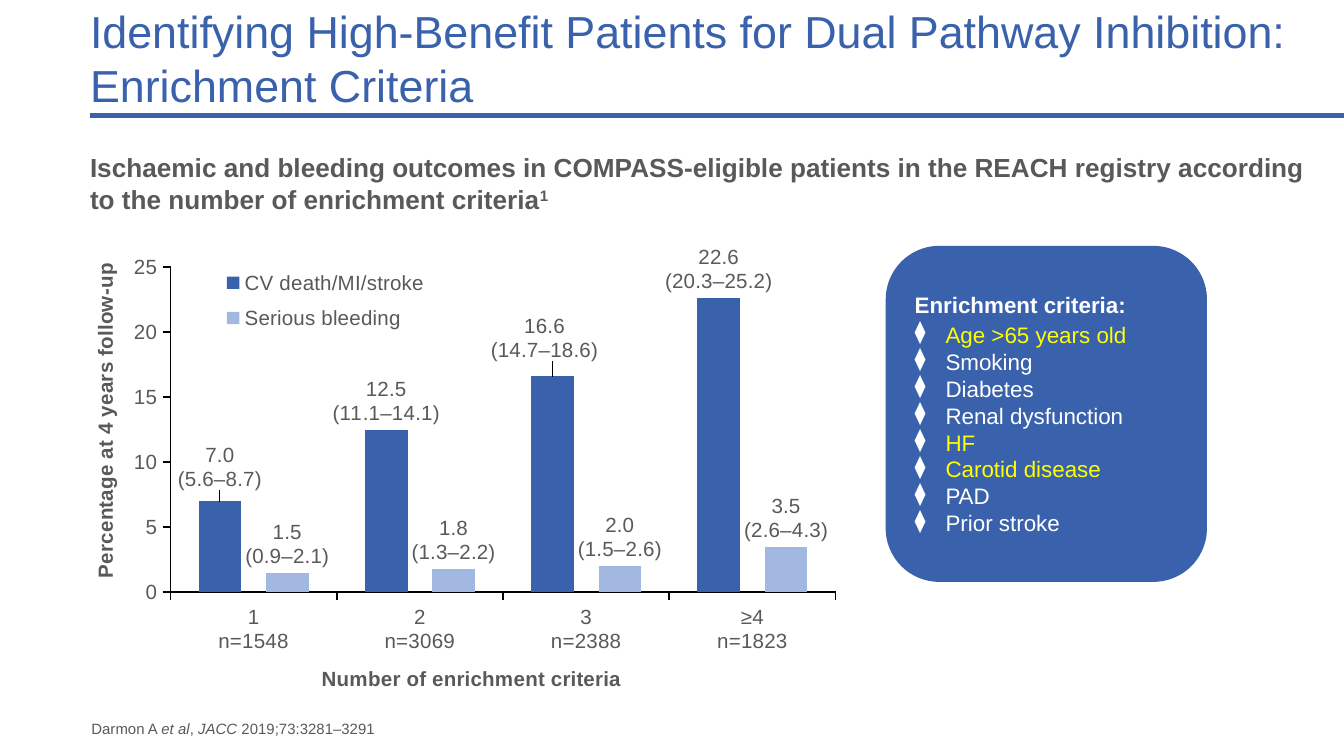
from lxml.etree import SubElement
from pptx import Presentation
from pptx.chart.data import CategoryChartData
from pptx.dml.color import RGBColor
from pptx.enum.chart import XL_CHART_TYPE as ChartType
from pptx.enum.chart import XL_LABEL_POSITION as LabelPosition
from pptx.enum.chart import XL_LEGEND_POSITION as LegendPosition
from pptx.enum.chart import XL_TICK_MARK as TickMark
from pptx.enum.shapes import MSO_CONNECTOR as Connector
from pptx.enum.shapes import MSO_SHAPE as Shape
from pptx.enum.text import MSO_ANCHOR as Anchor
from pptx.enum.text import PP_ALIGN as Align
from pptx.oxml import parse_xml
from pptx.oxml.ns import nsdecls, qn
from pptx.util import Inches, Pt

BLUE = RGBColor(0x39, 0x61, 0xAC)
PALE_BLUE = RGBColor(0xA3, 0xB8, 0xE0)
GREY = RGBColor(0x59, 0x59, 0x59)
BLACK = RGBColor(0, 0, 0)
WHITE = RGBColor(0xFF, 0xFF, 0xFF)
YELLOW = RGBColor(0xFF, 0xFF, 0)

WIDTH = 10
HEIGHT = WIDTH * 9 / 16
LEFT, TEXT_WIDTH = 0.67, 9.06
CRITERIA = ["Age >65 years old", "Smoking", "Diabetes", "Renal dysfunction",
            "HF", "Carotid disease", "PAD", "Prior stroke"]
HIGHLIGHTED = {"Age >65 years old", "HF", "Carotid disease"}
CATEGORIES = ["1\nn=1548", "2\nn=3069", "3\nn=2388", "≥4\nn=1823"]
OUTCOMES = [
    ("CV death/MI/stroke", BLUE, [7, 12.5, 16.6, 22.6],
     ["5.6–8.7", "11.1–14.1", "14.7–18.6", "20.3–25.2"]),
    ("Serious bleeding", PALE_BLUE, [1.5, 1.8, 2, 3.5],
     ["0.9–2.1", "1.3–2.2", "1.5–2.6", "2.6–4.3"]),
]
LABEL_SHIFTS = {7: (0, -0.01), 16.6: (-0.01, -0.02)}


def set_font(font, color, **values):
    """Apply Arial, a colour and any further font values."""
    font.color.rgb = color
    for name, value in {"name": "Arial", **values}.items():
        setattr(font, name, value)


def add_span(para, text, color, **values):
    """Append a formatted run to a paragraph."""
    span = para.add_run()
    span.text = text
    set_font(span.font, color, **values)
    return span


def add_text_box(page, left, top, width, height, anchor):
    """Add a wrapping box without margins and return its first paragraph."""
    box = page.shapes.add_textbox(*map(Inches, (left, top, width, height)))
    frame = box.text_frame
    margins = {f"margin_{side}": 0 for side in ("left", "right", "top", "bottom")}
    for name, value in {"word_wrap": True, "vertical_anchor": anchor, **margins}.items():
        setattr(frame, name, value)
    return frame.paragraphs[0]


def add_title(page):
    """Add the two-line title and the rule below it."""
    para = add_text_box(page, LEFT, 0.43, TEXT_WIDTH, 0.4, Anchor.BOTTOM)
    for index, line in enumerate(["Identifying High-Benefit Patients for Dual Pathway Inhibition:",
                                  "Enrichment Criteria"]):
        if index:
            para.add_line_break()
        add_span(para, line, BLUE, size=Pt(24))
    rule = page.shapes.add_connector(
        Connector.STRAIGHT, *map(Inches, (LEFT, 0.86, WIDTH, 0.86)))
    rule.line.color.rgb = BLUE
    rule.line.width = Pt(2.25)
    SubElement(rule._element.spPr, qn("a:effectLst"))


def add_subtitle(page):
    """Add the bold chart heading with its reference mark."""
    para = add_text_box(page, LEFT, 1.13, TEXT_WIDTH, 0.33, Anchor.TOP)
    style = {"size": Pt(14), "bold": True}
    add_span(para, "Ischaemic and bleeding outcomes in COMPASS-eligible patients in the "
             "REACH registry according to the number of enrichment criteria", GREY, **style)
    mark = add_span(para, "1", GREY, **style)
    mark.font._element.set("baseline", "30000")


def add_bullet(para):
    """Give a paragraph a white diamond bullet with a hanging indent."""
    props = para._p.get_or_add_pPr()
    props.set("marL", str(Inches(0.23)))
    props.set("indent", str(-Inches(0.23)))
    color = SubElement(props, qn("a:buClr"))
    SubElement(color, qn("a:srgbClr"), val=str(WHITE))
    SubElement(props, qn("a:buChar"), char="⧫")


def add_criteria(page):
    """Add the rounded panel that lists the enrichment criteria."""
    panel = page.shapes.add_shape(
        Shape.ROUNDED_RECTANGLE, *map(Inches, (6.59, 1.83, 2.39, 2.5)))
    panel.shadow.inherit = False
    panel.fill.solid()
    panel.fill.fore_color.rgb = BLUE
    panel.line.fill.background()
    frame = panel.text_frame
    frame.word_wrap = True
    frame.vertical_anchor = Anchor.MIDDLE
    heading = frame.paragraphs[0]
    heading.alignment = Align.LEFT
    heading.space_after = Pt(1.5)
    add_span(heading, "Enrichment criteria:", WHITE, size=Pt(12), bold=True)
    for criterion in CRITERIA:
        para = frame.add_paragraph()
        para.alignment = Align.LEFT
        add_bullet(para)
        color = YELLOW if criterion in HIGHLIGHTED else WHITE
        add_span(para, criterion, color, size=Pt(12))


def make_layout(*shares, target="", mode=""):
    """Build a manual chart layout from shares of the chart's size."""
    inner = f'<c:layoutTarget val="{target}"/>' if target else ""
    modes = "".join(f'<c:{axis}Mode val="{mode}"/>' for axis in "xy" if mode)
    sizes = "".join(f'<c:{name} val="{share}"/>' for name, share in zip("xywh", shares))
    return parse_xml(f'<c:layout {nsdecls("c")}><c:manualLayout>{inner}{modes}{sizes}'
                     "</c:manualLayout></c:layout>")


def place(element, layout, before):
    """Put a layout in a chart element ahead of the named child."""
    for old in element.findall(qn("c:layout")):
        element.remove(old)
    element.find(qn(before)).addprevious(layout)


def format_axis(axis, title, left, top):
    """Style an axis and place its bold title."""
    for name, value in {"has_major_gridlines": False, "major_tick_mark": TickMark.OUTSIDE,
                        "minor_tick_mark": TickMark.NONE}.items():
        setattr(axis, name, value)
    axis.format.line.color.rgb = BLACK
    axis.format.line.width = Pt(1)
    para = axis.axis_title.text_frame.paragraphs[0]
    add_span(para, title, GREY, size=Pt(11), bold=True)
    place(axis.axis_title._element, make_layout(left, top, mode="edge"), "c:overlay")


def add_labels(series, values, ranges):
    """Label each column with its value and interval."""
    for index, (value, interval) in enumerate(zip(values, ranges)):
        label = series.points[index].data_label
        frame = label.text_frame
        frame.text = f"{value:.1f}\n({interval})"
        frame.word_wrap = False
        for para in frame.paragraphs:
            set_font(para.runs[0].font, GREY, size=Pt(11))
        label.position = LabelPosition.OUTSIDE_END
        if value in LABEL_SHIFTS:
            place(label._get_or_add_dLbl(), make_layout(*LABEL_SHIFTS[value]), "c:tx")


def add_outcome_chart(page):
    """Add the clustered column chart of outcomes."""
    data = CategoryChartData(number_format="#,##0.0")
    data.categories = CATEGORIES
    for name, _, values, _ in OUTCOMES:
        data.add_series(name, values)
    chart = page.shapes.add_chart(ChartType.COLUMN_CLUSTERED,
                                  *map(Inches, (0.47, 1.75, 5.92, 3.6)), data).chart
    set_font(chart.font, GREY, size=Pt(11))
    chart.has_title = False
    plot = chart.plots[0]
    for name, value in {"gap_width": 132, "overlap": -58, "vary_by_categories": False}.items():
        setattr(plot, name, value)
    for series, (_, color, values, ranges) in zip(plot.series, OUTCOMES):
        series.format.fill.solid()
        series.format.fill.fore_color.rgb = color
        add_labels(series, values, ranges)
    format_axis(chart.category_axis, "Number of enrichment criteria", 0.32, 0.88)
    format_axis(chart.value_axis, "Percentage at 4 years follow-up", 0.03, 0.05)
    for name, value in {"minimum_scale": 0, "maximum_scale": 25, "major_unit": 5}.items():
        setattr(chart.value_axis, name, value)
    chart.value_axis.tick_labels.number_format = "0"
    chart.value_axis.tick_labels.number_format_is_linked = False
    chart.has_legend = True
    chart.legend.position = LegendPosition.TOP
    chart.legend.include_in_layout = False
    place(chart.legend._element, make_layout(0.17, 0.05, 0.32, 0.17, mode="edge"), "c:overlay")
    area = chart._chartSpace.find(".//" + qn("c:plotArea"))
    place(area, make_layout(0.135, 0.066, 0.836, 0.672, target="inner", mode="edge"),
          "c:barChart")


def add_reference(page):
    """Add the citation at the foot of the slide."""
    para = add_text_box(page, 0.68, 5.36, 6.75, 0.13, Anchor.BOTTOM)
    for text, italic in [("Darmon A ", False), ("et al", True), (",", False),
                         (" JACC ", True), ("2019;73:3281–3291", False)]:
        add_span(para, text, GREY, size=Pt(8), italic=italic)


def main():
    """Build and save the slide."""
    deck = Presentation()
    deck.slide_width, deck.slide_height = Inches(WIDTH), Inches(HEIGHT)
    page = deck.slides.add_slide(deck.slide_layouts[6])
    for add_part in (add_title, add_subtitle, add_criteria, add_outcome_chart, add_reference):
        add_part(page)
    deck.save("out.pptx")


if __name__ == "__main__":
    main()
